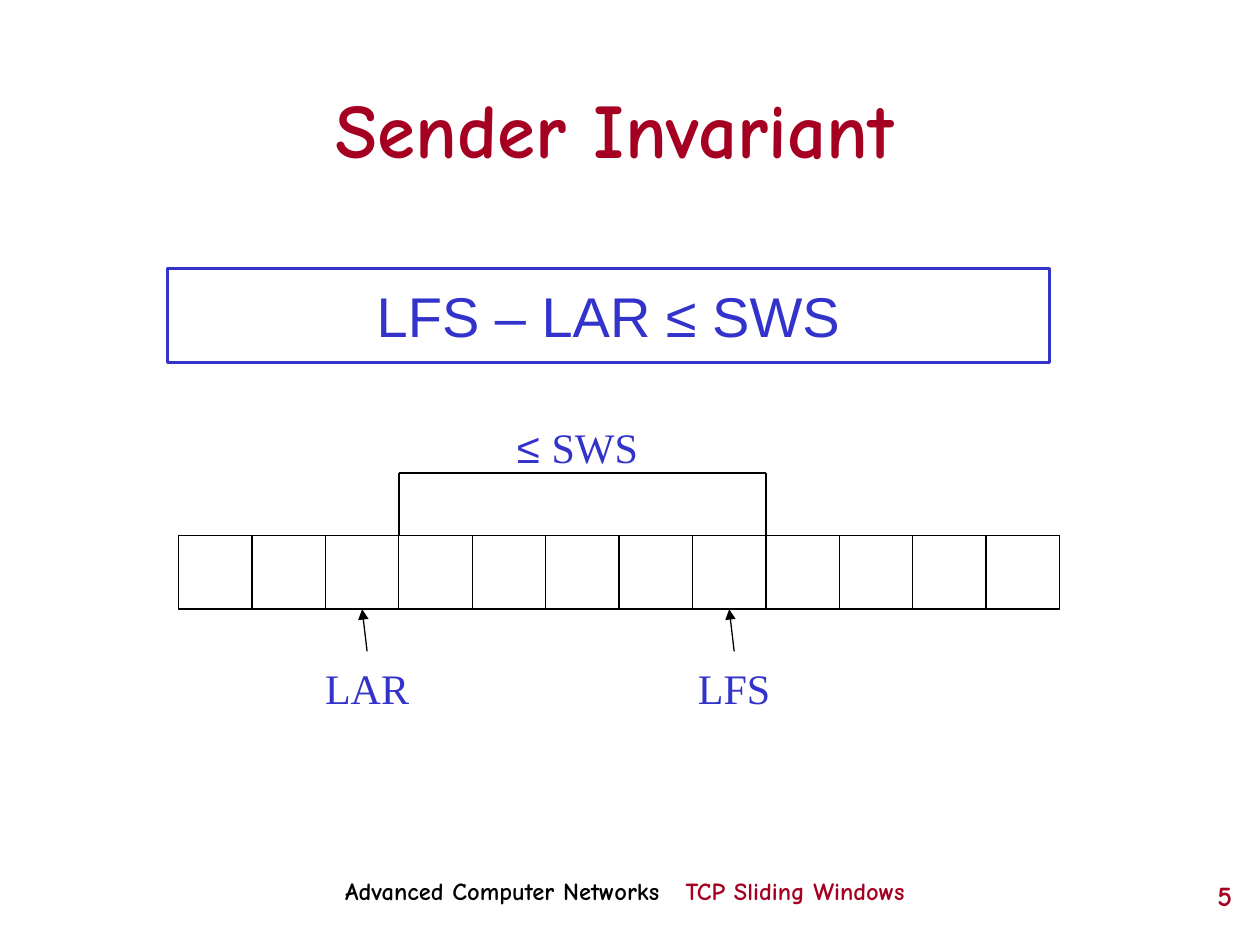
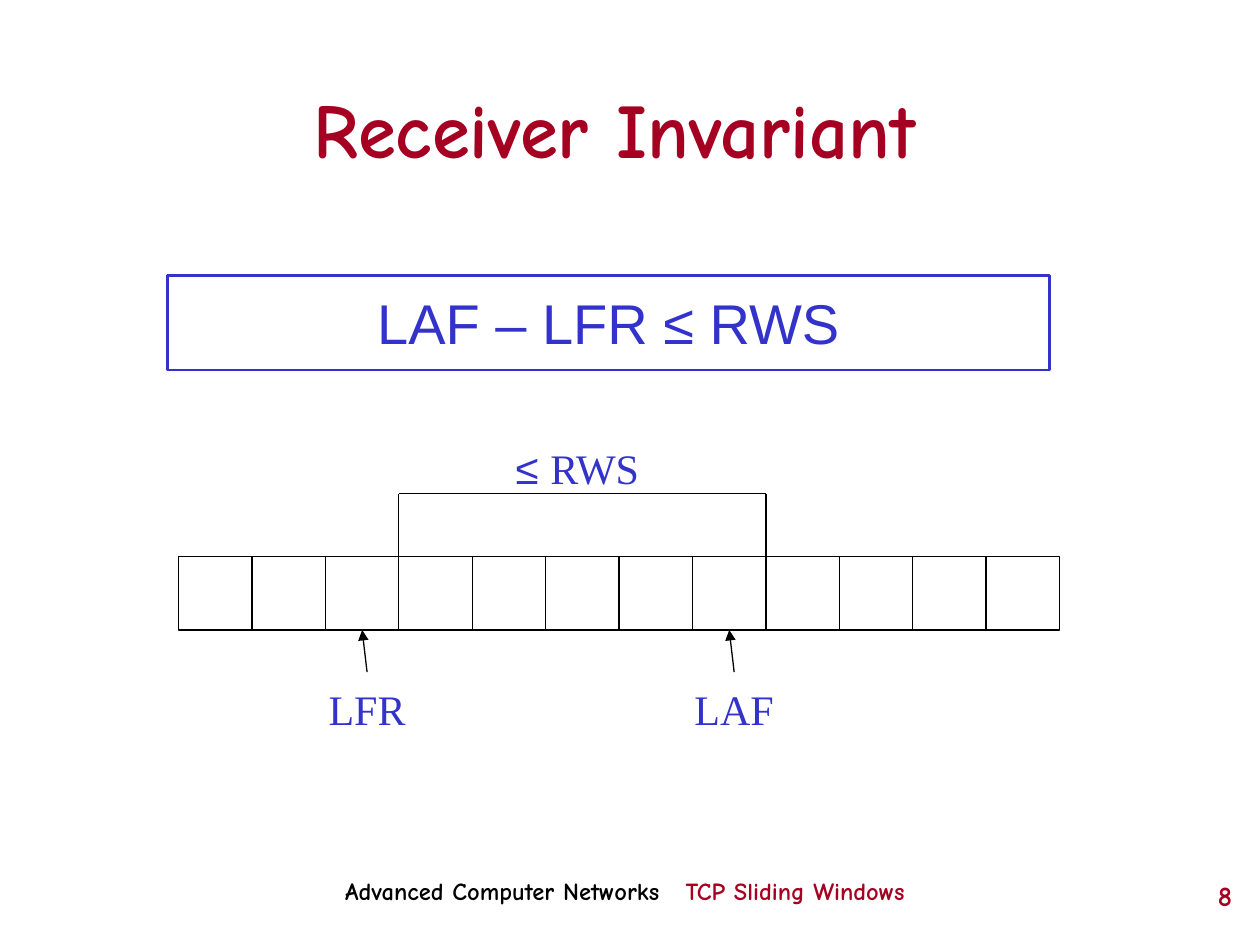
"""Build two slides on the sender and receiver sliding-window invariants."""
import dataclasses

import lxml.etree
import pptx
import pptx.dml.color
import pptx.enum.shapes
import pptx.enum.text
import pptx.oxml.ns
import pptx.util

Cm = pptx.util.Cm
Pt = pptx.util.Pt
qn = pptx.oxml.ns.qn
Align = pptx.enum.text.PP_ALIGN
Anchor = pptx.enum.text.MSO_ANCHOR


@dataclasses.dataclass(frozen=True)
class Theme:
    red: str = "A50021"
    blue: str = "3333CC"
    black: str = "000000"
    white: str = "FFFFFF"
    heading_font: str = "Comic Neue"
    formula_font: str = "Arial"
    label_font: str = "Times New Roman"
    title_size: float = 44
    formula_size: float = 32
    label_size: float = 24
    number_size: float = 16
    footer_size: float = 14
    thin: float = 0.75
    medium: float = 1.25
    thick: float = 1.5


class Deck:
    CELL_COUNT = 12
    CELL_SIZE = 1.48
    ROW_LEFT = 3.6
    LABEL_WIDTH = 2.54
    LABEL_SHIFT = 0.1
    BRACKET_HEIGHT = 1.27

    def __init__(self, theme):
        self.theme = theme
        self.presentation = pptx.Presentation()
        self.presentation.slide_width = Cm(25.4)
        self.presentation.slide_height = Cm(19.05)
        self.slide = None

    def color(self, value):
        return pptx.dml.color.RGBColor.from_string(value)

    def style(self, run, font, size, color, bold=False):
        run.font.name = font
        run.font.size = Pt(size)
        run.font.color.rgb = self.color(color)
        run.font.bold = bold

    def add_title_slide(self, title):
        self.slide = self.presentation.slides.add_slide(self.presentation.slide_layouts[5])
        shape = self.slide.shapes.title
        shape.left, shape.top, shape.width, shape.height = Cm(1.32), Cm(0.88), Cm(22.15), Cm(3.38)
        frame = shape.text_frame
        frame.text = title
        frame.auto_size = pptx.enum.text.MSO_AUTO_SIZE.NONE
        frame.vertical_anchor = Anchor.MIDDLE
        frame.paragraphs[0].alignment = Align.CENTER
        self.style(frame.paragraphs[0].runs[0], self.theme.heading_font,
                   self.theme.title_size, self.theme.red, True)

    def add_rectangle(self, left, top, width, height, line, weight, fill=None):
        shape = self.slide.shapes.add_shape(
            pptx.enum.shapes.MSO_SHAPE.RECTANGLE, Cm(left), Cm(top), Cm(width), Cm(height))
        shape.shadow.inherit = False
        if fill:
            shape.fill.solid()
            shape.fill.fore_color.rgb = self.color(fill)
        else:
            shape.fill.background()
        shape.line.color.rgb = self.color(line)
        shape.line.width = Pt(weight)
        return shape

    def add_formula(self, text, top):
        theme = self.theme
        shape = self.add_rectangle(3.38, top, 17.78, 1.9, theme.blue, theme.thick)
        frame = shape.text_frame
        frame.text = text
        frame.margin_top = Cm(0.26)
        frame.vertical_anchor = Anchor.TOP
        frame.paragraphs[0].alignment = Align.CENTER
        self.style(frame.paragraphs[0].runs[0], theme.formula_font, theme.formula_size, theme.blue)

    def add_label(self, center, top, *pieces):
        theme = self.theme
        shape = self.add_rectangle(center - self.LABEL_WIDTH / 2, top, self.LABEL_WIDTH,
                                   self.CELL_SIZE, theme.white, theme.thin, theme.white)
        frame = shape.text_frame
        frame.word_wrap = False
        frame.vertical_anchor = Anchor.MIDDLE
        paragraph = frame.paragraphs[0]
        paragraph.alignment = Align.CENTER
        for text, font in pieces:
            run = paragraph.add_run()
            run.text = text
            self.style(run, font, theme.label_size, theme.blue)
        return shape

    def add_line(self, start, end, weight, arrow=False):
        connector = self.slide.shapes.add_connector(
            pptx.enum.shapes.MSO_CONNECTOR.STRAIGHT, *(Cm(value) for value in (*start, *end)))
        connector.line.color.rgb = self.color(self.theme.black)
        connector.line.width = Pt(weight)
        properties = connector._element.spPr
        if arrow:
            lxml.etree.SubElement(properties.find(qn("a:ln")), qn("a:tailEnd"), type="triangle")
        lxml.etree.SubElement(properties, qn("a:effectLst"))
        return connector

    def add_pointer(self, label, cell):
        connector = self.add_line((0, 0), (0, 0), self.theme.thin, arrow=True)
        connector.begin_connect(label, 0)
        connector.end_connect(cell, 2)

    def add_bracket(self, left, right, bottom, weight):
        top = bottom - self.BRACKET_HEIGHT
        self.add_line((right, top), (right, bottom), self.theme.thin)
        self.add_line((left, top), (left, bottom), weight)
        self.add_line((left, top), (right, top), weight)

    def add_window(self, top, window, first, last, weight):
        theme, size = self.theme, self.CELL_SIZE
        edges = [self.ROW_LEFT + index * size for index in range(self.CELL_COUNT + 1)]
        cells = [self.add_rectangle(left, top, size, size, theme.black, theme.thin, theme.white)
                 for left in edges[:-1]]
        for name, index in ((first, 2), (last, 7)):
            center = edges[index] + size / 2 + self.LABEL_SHIFT
            label = self.add_label(center, top + 2.33, (name, theme.label_font))
            self.add_pointer(label, cells[index])
        left, right = edges[3], edges[8]
        self.add_label((left + right) / 2 - self.LABEL_SHIFT, top - 2.54,
                       ("≤ ", theme.formula_font), (window, theme.label_font))
        self.add_bracket(left, right, top, weight)

    def add_text_box(self, left, top, width, height):
        shape = self.slide.shapes.add_textbox(Cm(left), Cm(top), Cm(width), Cm(height))
        shape.text_frame.word_wrap = True
        return shape.text_frame.paragraphs[0]

    def add_footer(self, number):
        theme = self.theme
        paragraph = self.add_text_box(6.71, 17.53, 13.41, 0.99)
        tabs = lxml.etree.SubElement(paragraph._p.get_or_add_pPr(), qn("a:tabLst"))
        lxml.etree.SubElement(tabs, qn("a:tab"), pos=str(Cm(6.86)), algn="l")
        for text, color in (("Advanced Computer Networks\t", theme.black),
                            ("TCP Sliding Windows", theme.red)):
            run = paragraph.add_run()
            run.text = text
            self.style(run, theme.heading_font, theme.footer_size, color, True)
        paragraph = self.add_text_box(22.45, 17.58, 2.64, 1.27)
        paragraph.text = str(number)
        paragraph.alignment = Align.RIGHT
        self.style(paragraph.runs[0], theme.heading_font, theme.number_size, theme.red, True)


def main():
    theme = Theme()
    deck = Deck(theme)

    deck.add_title_slide("Sender Invariant")
    deck.add_formula("LFS – LAR ≤ SWS", 5.41)
    deck.add_window(10.8, "SWS", "LAR", "LFS", theme.medium)
    deck.add_footer(5)

    deck.add_title_slide("Receiver Invariant")
    deck.add_formula("LAF – LFR ≤ RWS", 5.56)
    deck.add_window(11.22, "RWS", "LFR", "LAF", theme.thin)
    deck.add_footer(8)

    deck.presentation.save("out.pptx")


if __name__ == "__main__":
    main()
